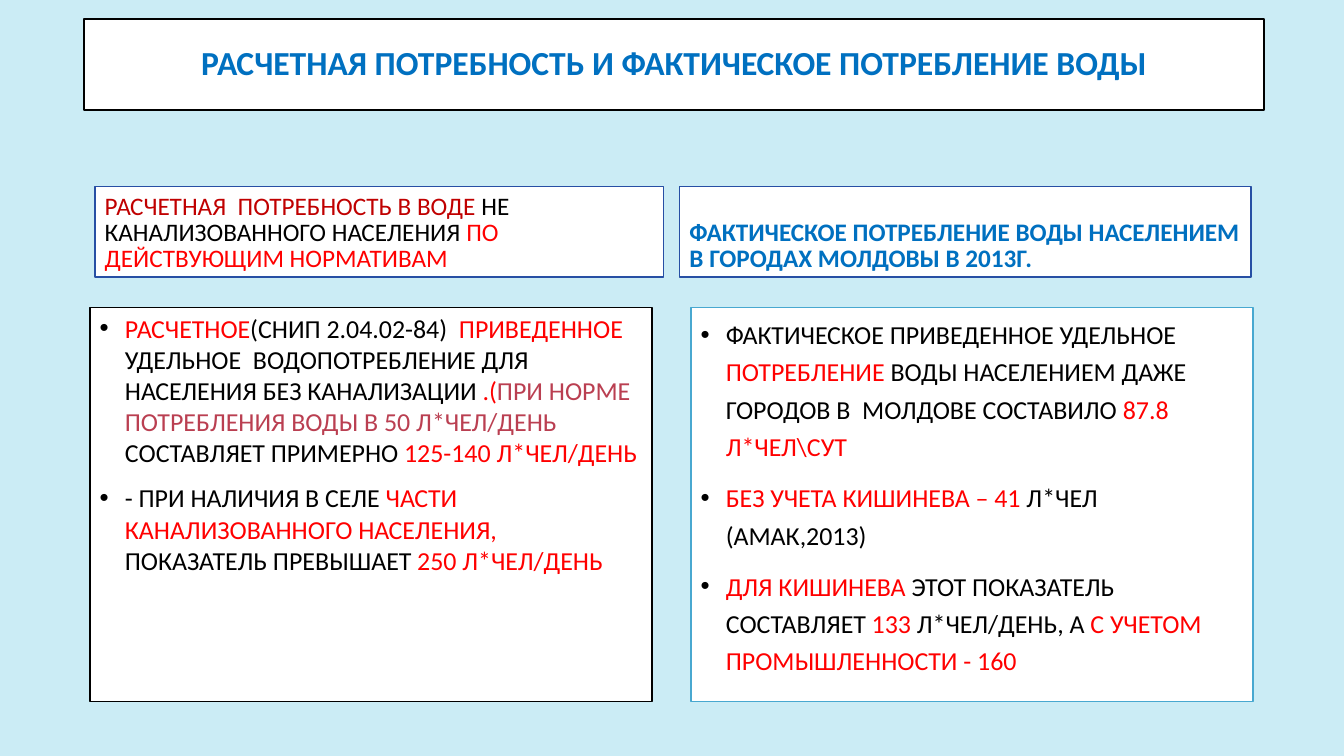
from dataclasses import dataclass

from lxml.etree import SubElement
from pptx import Presentation
from pptx.dml.color import RGBColor
from pptx.enum.shapes import MSO_SHAPE
from pptx.enum.text import MSO_ANCHOR, PP_ALIGN
from pptx.oxml.ns import qn
from pptx.util import Inches, Pt


@dataclass(frozen=True)
class Theme:
    font: str = "Calibri"
    title_size: float = 24
    heading_size: float = 18
    body_size: float = 18.5
    line_width: float = 1.25
    background: str = "CBECF5"
    panel: str = "FFFFFF"
    black: str = "000000"
    red: str = "FF0000"
    dark_red: str = "C00000"
    rose: str = "BA3F51"
    blue: str = "0070C0"
    heading_line: str = "274FA4"
    fact_line: str = "48A8D0"


T = Theme()

TITLE = [("РАСЧЕТНАЯ ПОТРЕБНОСТЬ И ФАКТИЧЕСКОЕ ПОТРЕБЛЕНИЕ ВОДЫ", T.blue)]

NORM_HEADING = [
    ("РАСЧЕТНАЯ  ПОТРЕБНОСТЬ В ВОДЕ ", T.dark_red),
    ("НЕ КАНАЛИЗОВАННОГО НАСЕЛЕНИЯ ", T.black),
    ("ПО ДЕЙСТВУЮЩИМ НОРМАТИВАМ", T.red),
]
NORM_POINTS = [
    [
        ("РАСЧЕТНОЕ", T.red),
        ("(СНИП 2.04.02-84)  ", T.black),
        ("ПРИВЕДЕННОЕ ", T.red),
        ("УДЕЛЬНОЕ  ВОДОПОТРЕБЛЕНИЕ ДЛЯ НАСЕЛЕНИЯ БЕЗ КАНАЛИЗАЦИИ ", T.black),
        (".(", T.red),
        ("ПРИ НОРМЕ ПОТРЕБЛЕНИЯ ВОДЫ В 50 Л*ЧЕЛ/ДЕНЬ ", T.rose),
        ("СОСТАВЛЯЕТ ПРИМЕРНО ", T.black),
        ("125-140 Л*ЧЕЛ/ДЕНЬ", T.red),
    ],
    [
        ("- ПРИ НАЛИЧИЯ В СЕЛЕ ", T.black),
        ("ЧАСТИ КАНАЛИЗОВАННОГО НАСЕЛЕНИЯ, ", T.red),
        ("ПОКАЗАТЕЛЬ ПРЕВЫШАЕТ ", T.black),
        ("250 Л*ЧЕЛ/ДЕНЬ", T.red),
    ],
]

FACT_HEADING = [
    ("ФАКТИЧЕСКОЕ ПОТРЕБЛЕНИЕ ВОДЫ НАСЕЛЕНИЕМ В ГОРОДАХ МОЛДОВЫ В 2013Г.", T.blue),
]
FACT_POINTS = [
    [
        ("ФАКТИЧЕСКОЕ ПРИВЕДЕННОЕ УДЕЛЬНОЕ ", T.black),
        ("ПОТРЕБЛЕНИЕ ", T.red),
        ("ВОДЫ НАСЕЛЕНИЕМ ДАЖЕ ГОРОДОВ В  МОЛДОВЕ СОСТАВИЛО ", T.black),
        ("87.8 Л*ЧЕЛ\\СУТ", T.red),
    ],
    [
        ("БЕЗ УЧЕТА КИШИНЕВА – 41 ", T.red),
        ("Л*ЧЕЛ (АМАК,2013)", T.black),
    ],
    [
        ("ДЛЯ КИШИНЕВА ", T.red),
        ("ЭТОТ ПОКАЗАТЕЛЬ СОСТАВЛЯЕТ ", T.black),
        ("133", T.red),
        (" Л*ЧЕЛ/ДЕНЬ, А ", T.black),
        ("С УЧЕТОМ ПРОМЫШЛЕННОСТИ - 160", T.red),
    ],
]


def rgb(value):
    return RGBColor.from_string(value)


def add_bullet(p):
    pPr = p._p.get_or_add_pPr()
    pPr.set("marL", str(Inches(0.25)))
    pPr.set("indent", str(-Inches(0.25)))
    color = SubElement(pPr, qn("a:buClr"))
    SubElement(color, qn("a:srgbClr"), val=T.black)
    SubElement(pPr, qn("a:buFont"), typeface="Arial")
    SubElement(pPr, qn("a:buChar"), char="•")


def write_text(tf, paragraphs, size, bold=False, align=PP_ALIGN.LEFT,
               anchor=MSO_ANCHOR.TOP, spacing=1.0, bullets=False):
    """Fill a text frame; each paragraph is a list of (text, colour) runs."""
    tf.word_wrap = True
    tf.vertical_anchor = anchor
    for i, runs in enumerate(paragraphs):
        p = tf.add_paragraph() if i else tf.paragraphs[0]
        p.alignment = align
        p.line_spacing = spacing
        p.space_before = Pt(10 if i else 0)
        if bullets:
            add_bullet(p)
        for text, color in runs:
            r = p.add_run()
            r.text = text
            r.font.name = T.font
            r.font.size = Pt(size)
            r.font.bold = bold
            r.font.color.rgb = rgb(color)


def add_panel(s, box, line, paragraphs, **text_format):
    sp = s.shapes.add_shape(MSO_SHAPE.RECTANGLE, *map(Inches, box))
    sp.shadow.inherit = False
    sp.fill.solid()
    sp.fill.fore_color.rgb = rgb(T.panel)
    sp.line.color.rgb = rgb(line)
    sp.line.width = Pt(T.line_width)
    write_text(sp.text_frame, paragraphs, **text_format)


def add_title(s, box):
    add_panel(s, box, T.black, [TITLE], size=T.title_size, bold=True,
              align=PP_ALIGN.CENTER, anchor=MSO_ANCHOR.MIDDLE, spacing=0.9)


def add_heading(s, box, runs, bold=False):
    add_panel(s, box, T.heading_line, [runs], size=T.heading_size, bold=bold,
              anchor=MSO_ANCHOR.BOTTOM, spacing=0.85)


def add_points(s, box, line, points, spacing=1.0):
    add_panel(s, box, line, points, size=T.body_size, spacing=spacing, bullets=True)


def build_comparison(prs):
    s = prs.slides.add_slide(prs.slide_layouts[6])
    s.background.fill.solid()
    s.background.fill.fore_color.rgb = rgb(T.background)
    heading_top, heading_height = 1.85, 0.9
    points_top, points_width, points_height = 3.05, 5.58, 3.91

    add_title(s, (0.83, 0.19, 11.71, 0.9))
    add_heading(s, (0.94, heading_top, 5.64, heading_height), NORM_HEADING)
    add_points(s, (0.89, points_top, points_width, points_height), T.black, NORM_POINTS)
    add_heading(s, (6.74, heading_top, 5.67, heading_height), FACT_HEADING, bold=True)
    add_points(s, (6.85, points_top, points_width, points_height), T.fact_line,
               FACT_POINTS, spacing=1.2)


def main():
    prs = Presentation()
    prs.slide_width, prs.slide_height = Inches(13.33), Inches(7.5)
    build_comparison(prs)
    prs.save("out.pptx")


if __name__ == "__main__":
    main()
